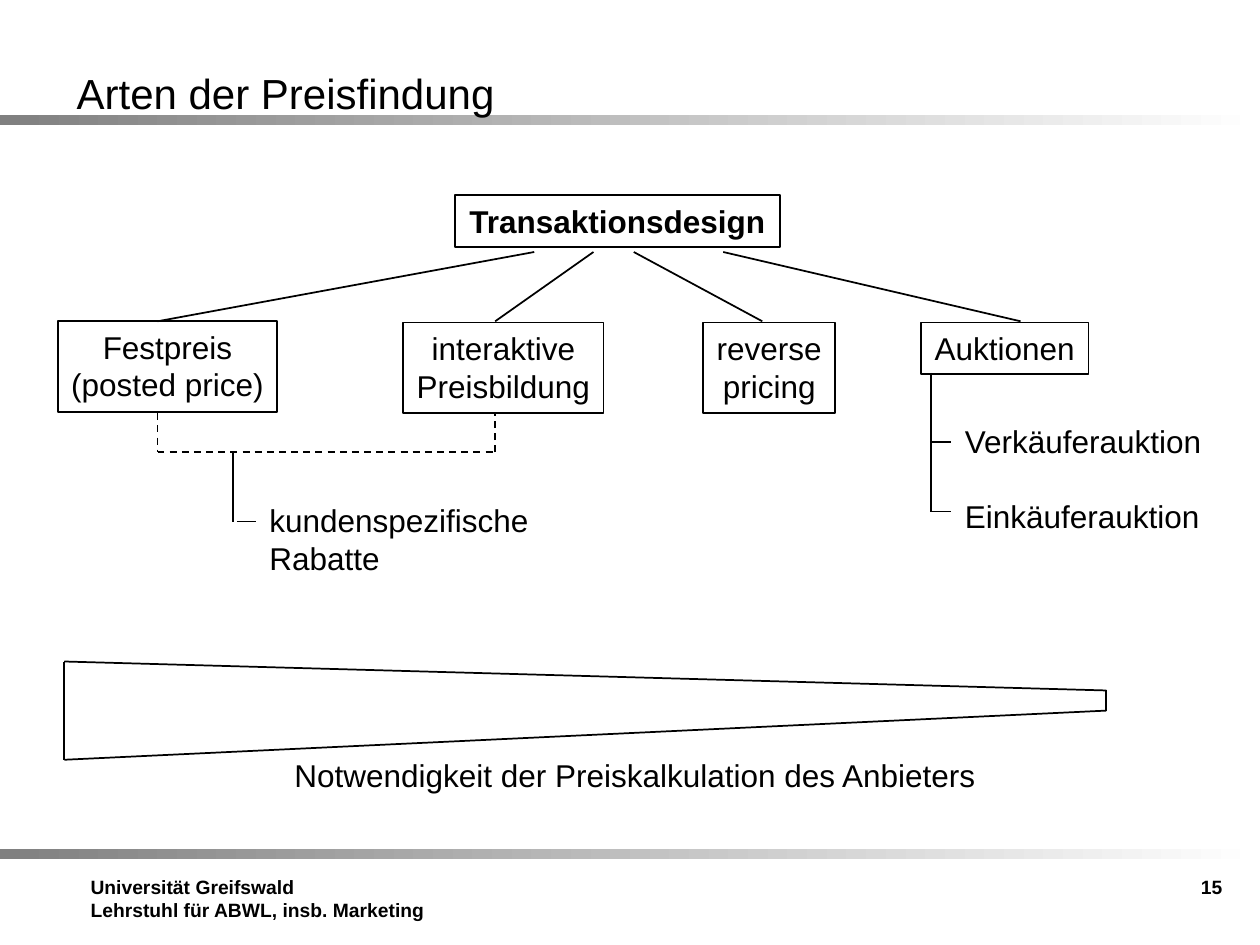
import pptx
import pptx.dml.color
import pptx.enum.dml
import pptx.enum.shapes
import pptx.enum.text
import pptx.oxml.ns
import pptx.util
from lxml import etree

PX = 9144  # EMU per px, 100 px to the inch
COLORS = {"ink": "000000", "bar_start": "808080", "bar_end": "FFFFFF"}
ALIGN = pptx.enum.text.PP_ALIGN
RECTANGLE = pptx.enum.shapes.MSO_SHAPE.RECTANGLE


def emu(*lengths):
    return [pptx.util.Emu(length * PX) for length in lengths]


def color(name):
    return pptx.dml.color.RGBColor.from_string(COLORS[name])


def style_line(line, dashed=False):
    line.color.rgb = color("ink")
    line.width = pptx.util.Pt(1)
    if dashed:
        line.dash_style = pptx.enum.dml.MSO_LINE.DASH


def write(shape, lines, size=18, bold=False, align=ALIGN.LEFT, wrap=False, grow=True, gap=0):
    """Fill a shape with one paragraph per line; gap is the space between them in points."""
    frame = shape.text_frame
    frame.word_wrap = wrap
    frame.vertical_anchor = pptx.enum.text.MSO_ANCHOR.TOP
    if grow:
        frame.auto_size = pptx.enum.text.MSO_AUTO_SIZE.SHAPE_TO_FIT_TEXT
    for index, line in enumerate(lines):
        paragraph = frame.add_paragraph() if index else frame.paragraphs[0]
        paragraph.text = line
        paragraph.alignment = align
        if index and gap:
            paragraph.space_before = pptx.util.Pt(gap)
        font = paragraph.font
        font.name, font.size, font.bold = "Arial", pptx.util.Pt(size), bold
        font.color.rgb = color("ink")


def add_text(slide, bounds, lines, **style):
    write(slide.shapes.add_textbox(*emu(*bounds)), lines, **style)


def add_box(slide, bounds, lines, bold=False):
    box = slide.shapes.add_shape(RECTANGLE, *emu(*bounds))
    box.shadow.inherit = False
    box.fill.background()
    style_line(box.line)
    write(box, lines, bold=bold, align=ALIGN.CENTER)


def add_gradient_bar(slide, top):
    bar = slide.shapes.add_shape(RECTANGLE, *emu(0, top, 1000, 8))
    bar.shadow.inherit = False
    bar.line.fill.background()
    bar.fill.gradient()
    bar.fill.gradient_angle = 0
    for stop, name, position in zip(bar.fill.gradient_stops, ("bar_start", "bar_end"), (0, 1)):
        stop.color.rgb = color(name)
        stop.position = position


def add_line(slide, start, end, dashed=False):
    connector = slide.shapes.add_connector(
        pptx.enum.shapes.MSO_CONNECTOR.STRAIGHT, *emu(*start, *end))
    style_line(connector.line, dashed)
    etree.SubElement(connector._element.spPr, pptx.oxml.ns.qn("a:effectLst"))


def add_path(slide, points, dashed=False):
    """Join consecutive points with straight lines."""
    for start, end in zip(points, points[1:]):
        add_line(slide, start, end, dashed)


def add_frame(slide):
    for top in (91, 674):
        add_gradient_bar(slide, top)
    add_text(slide, (51, 49, 355, 50), ["Arten der Preisfindung"], size=24)
    footer = {"size": 11, "bold": True, "wrap": True, "grow": False}
    add_text(slide, (62, 690, 291, 59),
             ["Universität Greifswald", "Lehrstuhl für ABWL, insb. Marketing"], **footer)
    add_text(slide, (747, 690, 233, 57), ["15"], align=ALIGN.RIGHT, **footer)


def add_tree(slide):
    add_box(slide, (361, 155, 258, 41), ["Transaktionsdesign"], bold=True)
    branches = [
        ((46, 255, 174, 72), ["Festpreis", "(posted price)"], 424, 125),
        ((320, 256, 159, 72), ["interaktive", "Preisbildung"], 471, 393),
        ((558, 256, 105, 72), ["reverse", "pricing"], 503, 605),
        ((731, 256, 133, 41), ["Auktionen"], 574, 810),
    ]
    for bounds, lines, root_x, branch_x in branches:
        add_box(slide, bounds, lines)
        add_line(slide, (branch_x, 255), (root_x, 200))


def add_discounts(slide):
    add_path(slide, [(125, 328), (125, 359), (393, 359), (393, 328)], dashed=True)
    add_line(slide, (185, 414), (185, 359))
    add_line(slide, (188, 414), (203, 414))
    add_text(slide, (204, 393, 237, 70), ["kundenspezifische", "Rabatte"], wrap=True)


def add_auction_types(slide):
    add_path(slide, [(739, 296), (739, 406), (755, 406)])
    add_line(slide, (739, 351), (755, 351))
    add_text(slide, (756, 330, 209, 100), ["Verkäuferauktion", "Einkäuferauktion"], gap=21)


def add_wedge(slide):
    add_path(slide, [(51, 525), (51, 603), (878, 564), (878, 548), (51, 525)])
    add_text(slide, (221, 595, 566, 40),
             ["Notwendigkeit der Preiskalkulation des Anbieters"], align=ALIGN.CENTER)


def main():
    presentation = pptx.Presentation()
    presentation.slide_width, presentation.slide_height = emu(1000, 750)
    slide = presentation.slides.add_slide(presentation.slide_layouts[6])
    add_frame(slide)
    add_tree(slide)
    add_discounts(slide)
    add_auction_types(slide)
    add_wedge(slide)
    presentation.save("out.pptx")


if __name__ == "__main__":
    main()
